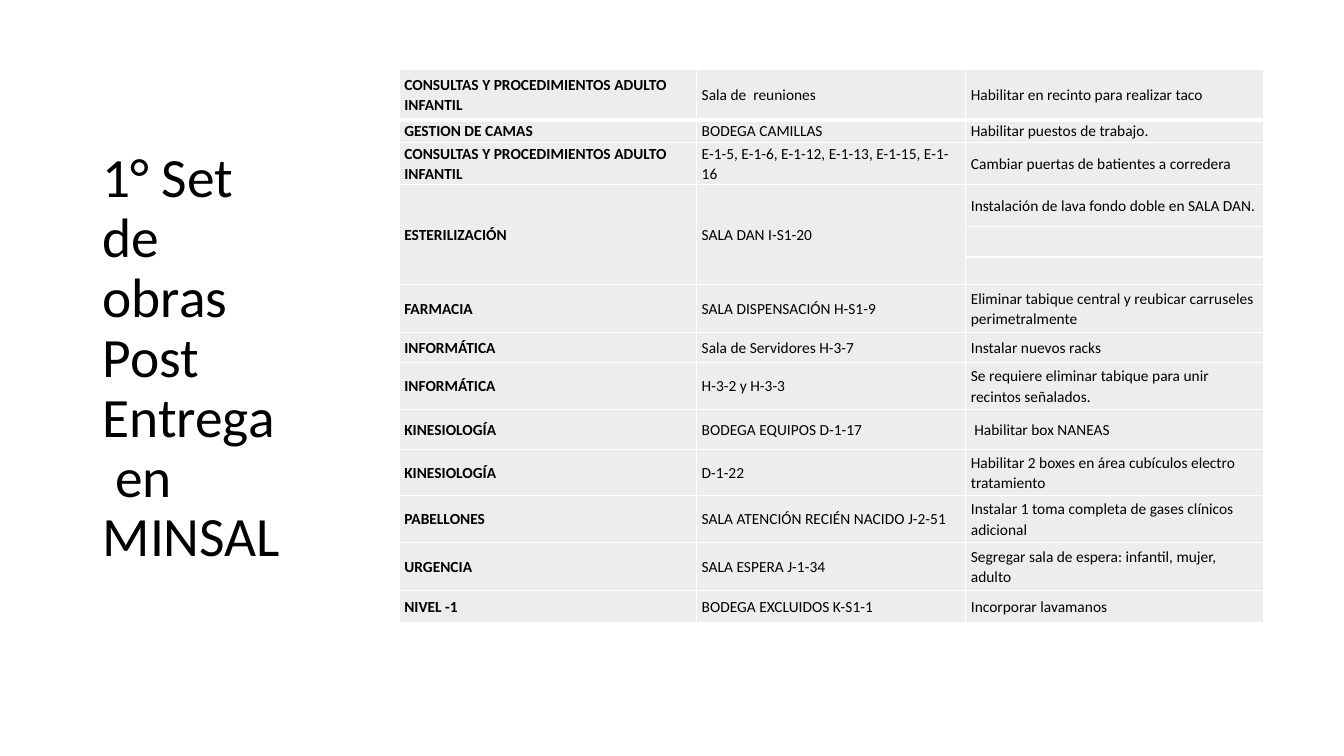
from dataclasses import dataclass

from lxml.etree import SubElement
from pptx import Presentation
from pptx.dml.color import RGBColor
from pptx.enum.text import MSO_ANCHOR
from pptx.oxml.ns import qn
from pptx.util import Pt

EMU_PER_PX = 9144


@dataclass(frozen=True)
class Theme:
    font: str = "Calibri"
    text: str = "000000"
    cell: str = "EDEDED"
    border: str = "FFFFFF"
    title_size: float = 39.6
    table_size: float = 11
    border_width: int = 1
    heading_border_width: int = 3


TITLE = "1° Set de obras Post Entrega   en MINSAL"
COLUMN_WIDTHS = [295, 267, 295]
WORKS = [
    (50, "CONSULTAS Y PROCEDIMIENTOS ADULTO INFANTIL", "Sala de  reuniones",
     "Habilitar en recinto para realizar taco"),
    (22, "GESTION DE CAMAS", "BODEGA CAMILLAS", "Habilitar puestos de trabajo."),
    (42, "CONSULTAS Y PROCEDIMIENTOS ADULTO INFANTIL",
     "E-1-5, E-1-6, E-1-12, E-1-13, E-1-15, E-1-16",
     "Cambiar puertas de batientes a corredera"),
    (42, "ESTERILIZACIÓN", "SALA DAN I-S1-20",
     "Instalación de lava fondo doble en SALA DAN."),
    (30, "", "", ""),
    (27, "", "", ""),
    (48, "FARMACIA", "SALA DISPENSACIÓN H-S1-9",
     "Eliminar tabique central y reubicar carruseles perimetralmente"),
    (30, "INFORMÁTICA", "Sala de Servidores H-3-7", "Instalar nuevos racks"),
    (46, "INFORMÁTICA", "H-3-2 y H-3-3",
     "Se requiere eliminar tabique para unir recintos señalados."),
    (40, "KINESIOLOGÍA", "BODEGA EQUIPOS D-1-17", " Habilitar box NANEAS"),
    (46, "KINESIOLOGÍA", "D-1-22",
     "Habilitar 2 boxes en área cubículos electro tratamiento"),
    (46, "PABELLONES", "SALA ATENCIÓN RECIÉN NACIDO J-2-51",
     "Instalar 1 toma completa de gases clínicos adicional"),
    (48, "URGENCIA", "SALA ESPERA J-1-34",
     "Segregar sala de espera: infantil, mujer, adulto"),
    (32, "NIVEL -1", "BODEGA EXCLUIDOS K-S1-1", "Incorporar lavamanos"),
]
MERGES = [((3, 0), (5, 0)), ((3, 1), (5, 1))]


def px(length):
    return length * EMU_PER_PX


class SlideBuilder:
    def __init__(self, slide, theme):
        self.slide = slide
        self.theme = theme

    def style(self, paragraph, size, spacing, bold=False):
        paragraph.line_spacing = spacing
        font = paragraph.font
        font.name = self.theme.font
        font.size = Pt(size)
        font.bold = bold
        font.color.rgb = RGBColor.from_string(self.theme.text)

    def title(self, text, left, top, width, height):
        shape = self.slide.shapes.add_textbox(px(left), px(top), px(width), px(height))
        frame = shape.text_frame
        frame.word_wrap = True
        frame.vertical_anchor = MSO_ANCHOR.MIDDLE
        frame.text = text
        self.style(frame.paragraphs[0], self.theme.title_size, 0.9)

    def border(self, cell, side, width):
        line = SubElement(cell._tc.get_or_add_tcPr(), qn(f"a:{side}"), w=str(Pt(width)))
        fill = SubElement(line, qn("a:solidFill"))
        SubElement(fill, qn("a:srgbClr"), val=self.theme.border)

    def cell(self, cell, text, bold, bottom_width, top_width):
        widths = {"lnL": self.theme.border_width, "lnR": self.theme.border_width,
                  "lnT": top_width, "lnB": bottom_width}
        for side, width in widths.items():
            self.border(cell, side, width)
        cell.fill.solid()
        cell.fill.fore_color.rgb = RGBColor.from_string(self.theme.cell)
        cell.vertical_anchor = MSO_ANCHOR.MIDDLE
        cell.margin_left = cell.margin_right = px(5)
        cell.margin_top = cell.margin_bottom = 0
        cell.text = text
        paragraph = cell.text_frame.paragraphs[0]
        paragraph.space_after = Pt(8)
        self.style(paragraph, self.theme.table_size, 1.07, bold)

    def table(self, works, column_widths, merges, left, top):
        heights = [work[0] for work in works]
        shape = self.slide.shapes.add_table(
            len(works), len(column_widths), px(left), px(top),
            px(sum(column_widths)), px(sum(heights)))
        table = shape.table
        table.first_row = table.horz_banding = False
        for column, width in zip(table.columns, column_widths):
            column.width = px(width)
        thin, thick = self.theme.border_width, self.theme.heading_border_width
        for index, (height, *texts) in enumerate(works):
            table.rows[index].height = px(height)
            bottom_width = thick if index == 0 else thin
            top_width = thick if index == 1 else thin
            for column, text in enumerate(texts):
                self.cell(table.cell(index, column), text, column == 0,
                          bottom_width, top_width)
        for first, last in merges:
            table.cell(*first).merge(table.cell(*last))


def main():
    presentation = Presentation()
    presentation.slide_width = px(1333)
    presentation.slide_height = px(750)
    slide = presentation.slides.add_slide(presentation.slide_layouts[6])
    builder = SlideBuilder(slide, Theme())
    builder.title(TITLE, 92, 284, 206, 145)
    builder.table(WORKS, COLUMN_WIDTHS, MERGES, 396, 69)
    presentation.save("out.pptx")


if __name__ == "__main__":
    main()
